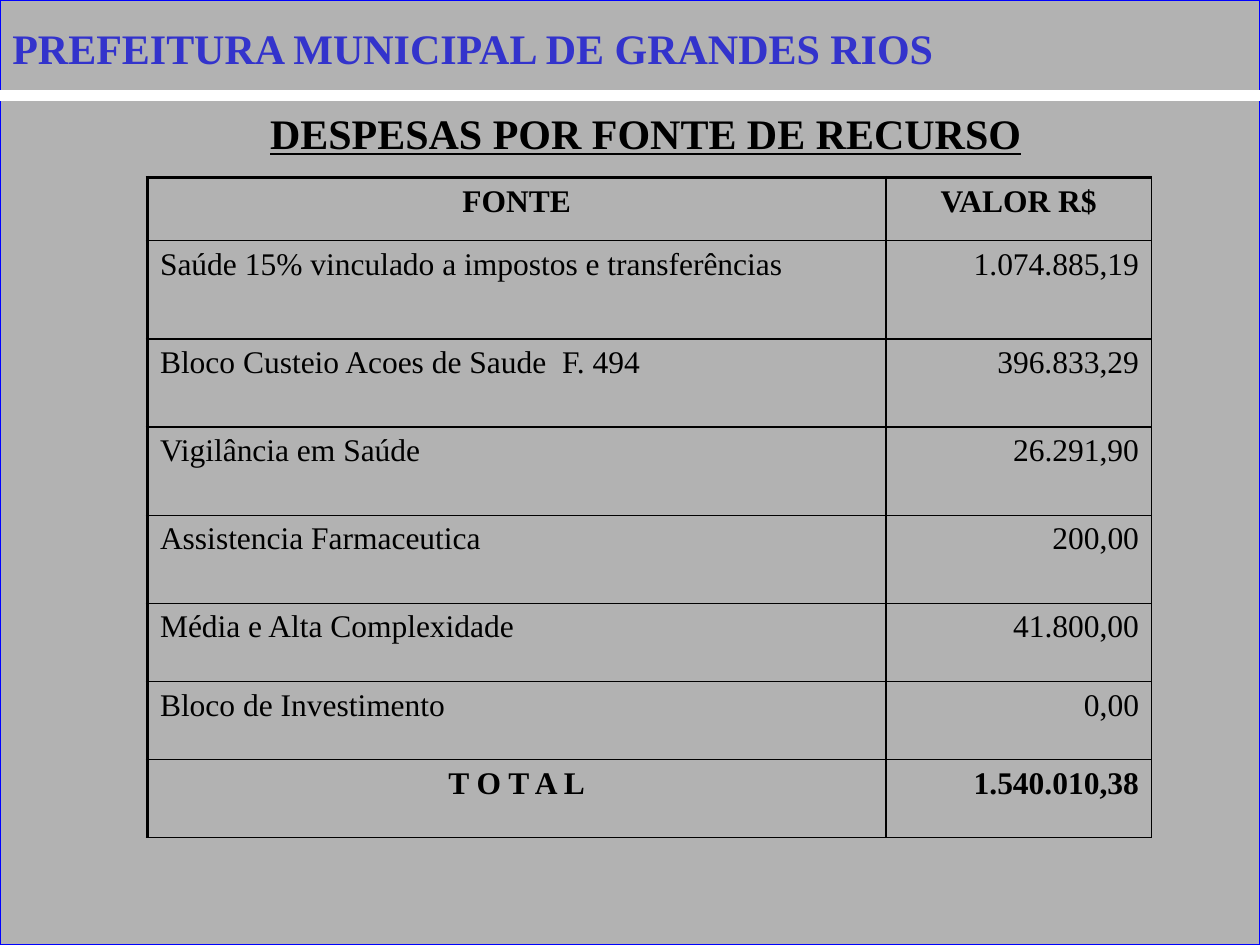
from dataclasses import dataclass

import lxml.etree
import pptx
import pptx.dml.color
import pptx.enum.shapes
import pptx.enum.text
import pptx.oxml
import pptx.oxml.ns
import pptx.util

ALIGN = pptx.enum.text.PP_ALIGN


@dataclass(frozen=True)
class Theme:
    font: str = "Times New Roman"
    background: str = "B2B2B2"
    frame: str = "0000FF"
    divider: str = "FFFFFF"
    title: str = "3333CC"
    ink: str = "000000"
    heading_size: int = 24
    table_size: int = 18
    frame_width: float = 0.75
    divider_width: float = 6
    thin_border: float = 1
    thick_border: float = 2.25


@dataclass(frozen=True)
class Area:
    column: float
    row: float
    columns: float
    rows: float

    def box(self) -> tuple:
        return tuple(map(grid, (self.column, self.row, self.columns, self.rows)))


@dataclass(frozen=True)
class TextStyle:
    size: int
    color: str
    bold: bool = False
    underline: bool = False
    align: ALIGN = ALIGN.LEFT


@dataclass(frozen=True)
class Expense:
    source: str
    amount: str
    rows: float
    source_align: ALIGN = ALIGN.LEFT
    amount_align: ALIGN = ALIGN.RIGHT
    bold: bool = False


THEME = Theme()
GRID_COLUMNS, GRID_ROWS = 100, 75
UNIT = pptx.util.Inches(10) // GRID_COLUMNS
TABLE_COLUMNS = (58.6, 21.1)
EXPENSES = (
    Expense("FONTE", "VALOR R$", 5, ALIGN.CENTER, ALIGN.CENTER, True),
    Expense("Saúde 15% vinculado a impostos e transferências", "1.074.885,19", 7.8),
    Expense("Bloco Custeio Acoes de Saude  F. 494", "396.833,29", 7),
    Expense("Vigilância em Saúde", "26.291,90", 7),
    Expense("Assistencia Farmaceutica", "200,00", 7),
    Expense("Média e Alta Complexidade", "41.800,00", 6.2),
    Expense("Bloco de Investimento", "0,00", 6.2),
    Expense("T O T A L", "1.540.010,38", 6.2, source_align=ALIGN.CENTER, bold=True),
)


def grid(units: float) -> int:
    return round(units * UNIT)


def rgb(color: str) -> pptx.dml.color.RGBColor:
    return pptx.dml.color.RGBColor.from_string(color)


def add_text(frame, text: str, style: TextStyle):
    paragraph = frame.paragraphs[0]
    paragraph.alignment = style.align
    run = paragraph.add_run()
    run.text = text
    run.font.name = THEME.font
    run.font.size = pptx.util.Pt(style.size)
    run.font.bold = style.bold
    run.font.underline = style.underline
    run.font.color.rgb = rgb(style.color)
    return paragraph


def add_text_box(slide, area: Area, text: str, style: TextStyle):
    frame = slide.shapes.add_textbox(*area.box()).text_frame
    frame.word_wrap = True
    return add_text(frame, text, style)


def add_text_shadow(paragraph) -> None:
    properties = paragraph.runs[0].font.fill._xPr
    effects = pptx.oxml.parse_xml(
        f'<a:effectLst {pptx.oxml.ns.nsdecls("a")}>'
        '<a:outerShdw dist="35921" dir="2700000" algn="ctr">'
        '<a:srgbClr val="808080"/></a:outerShdw></a:effectLst>'
    )
    properties.find(pptx.oxml.ns.qn("a:solidFill")).addnext(effects)


def add_background(slide) -> None:
    shape = slide.shapes.add_shape(
        pptx.enum.shapes.MSO_SHAPE.RECTANGLE, *Area(0, 0, GRID_COLUMNS, GRID_ROWS).box()
    )
    shape.shadow.inherit = False
    shape.fill.solid()
    shape.fill.fore_color.rgb = rgb(THEME.background)
    shape.line.color.rgb = rgb(THEME.frame)
    shape.line.width = pptx.util.Pt(THEME.frame_width)


def add_divider(slide, row: float) -> None:
    connector = slide.shapes.add_connector(
        pptx.enum.shapes.MSO_CONNECTOR.STRAIGHT,
        0, grid(row), grid(GRID_COLUMNS), grid(row),
    )
    connector.line.color.rgb = rgb(THEME.divider)
    connector.line.width = pptx.util.Pt(THEME.divider_width)
    lxml.etree.SubElement(connector._element.spPr, pptx.oxml.ns.qn("a:effectLst"))


def set_borders(cell, thick_sides: str) -> None:
    properties = cell._tc.get_or_add_tcPr()
    for side in "LRTB":
        width = THEME.thick_border if side in thick_sides else THEME.thin_border
        properties.append(pptx.oxml.parse_xml(
            f'<a:ln{side} {pptx.oxml.ns.nsdecls("a")} w="{pptx.util.Pt(width)}">'
            f'<a:solidFill><a:srgbClr val="{THEME.ink}"/></a:solidFill></a:ln{side}>'
        ))


def add_expense_table(slide, column: float, row: float) -> None:
    area = Area(column, row, sum(TABLE_COLUMNS), sum(item.rows for item in EXPENSES))
    table = slide.shapes.add_table(len(EXPENSES), len(TABLE_COLUMNS), *area.box()).table
    table.first_row = table.horz_banding = False
    for table_column, width in zip(table.columns, TABLE_COLUMNS):
        table_column.width = grid(width)
    for row_index, item in enumerate(EXPENSES):
        table.rows[row_index].height = grid(item.rows)
        contents = ((item.source, item.source_align), (item.amount, item.amount_align))
        for column_index, (text, align) in enumerate(contents):
            cell = table.cell(row_index, column_index)
            style = TextStyle(THEME.table_size, THEME.ink, item.bold, align=align)
            add_text(cell.text_frame, text, style)
            set_borders(cell, "L" * (column_index == 0) + "T" * (row_index == 0))
            cell.fill.background()


def main() -> None:
    presentation = pptx.Presentation()
    presentation.slide_width = grid(GRID_COLUMNS)
    presentation.slide_height = grid(GRID_ROWS)
    slide = presentation.slides.add_slide(presentation.slide_layouts[6])

    add_background(slide)
    add_divider(slide, 7.6)
    heading = add_text_box(
        slide, Area(7.5, 6, 87.5, 49.1), "DESPESAS POR FONTE DE RECURSO",
        TextStyle(THEME.heading_size, THEME.ink, True, True, ALIGN.CENTER),
    )
    heading.line_spacing = 1.5
    title = add_text_box(
        slide, Area(0, 1.3, 82.3, 5), "PREFEITURA MUNICIPAL DE GRANDES RIOS",
        TextStyle(THEME.heading_size, THEME.title, True),
    )
    add_text_shadow(title)
    add_expense_table(slide, 11.7, 14.1)
    presentation.save("out.pptx")


if __name__ == "__main__":
    main()
